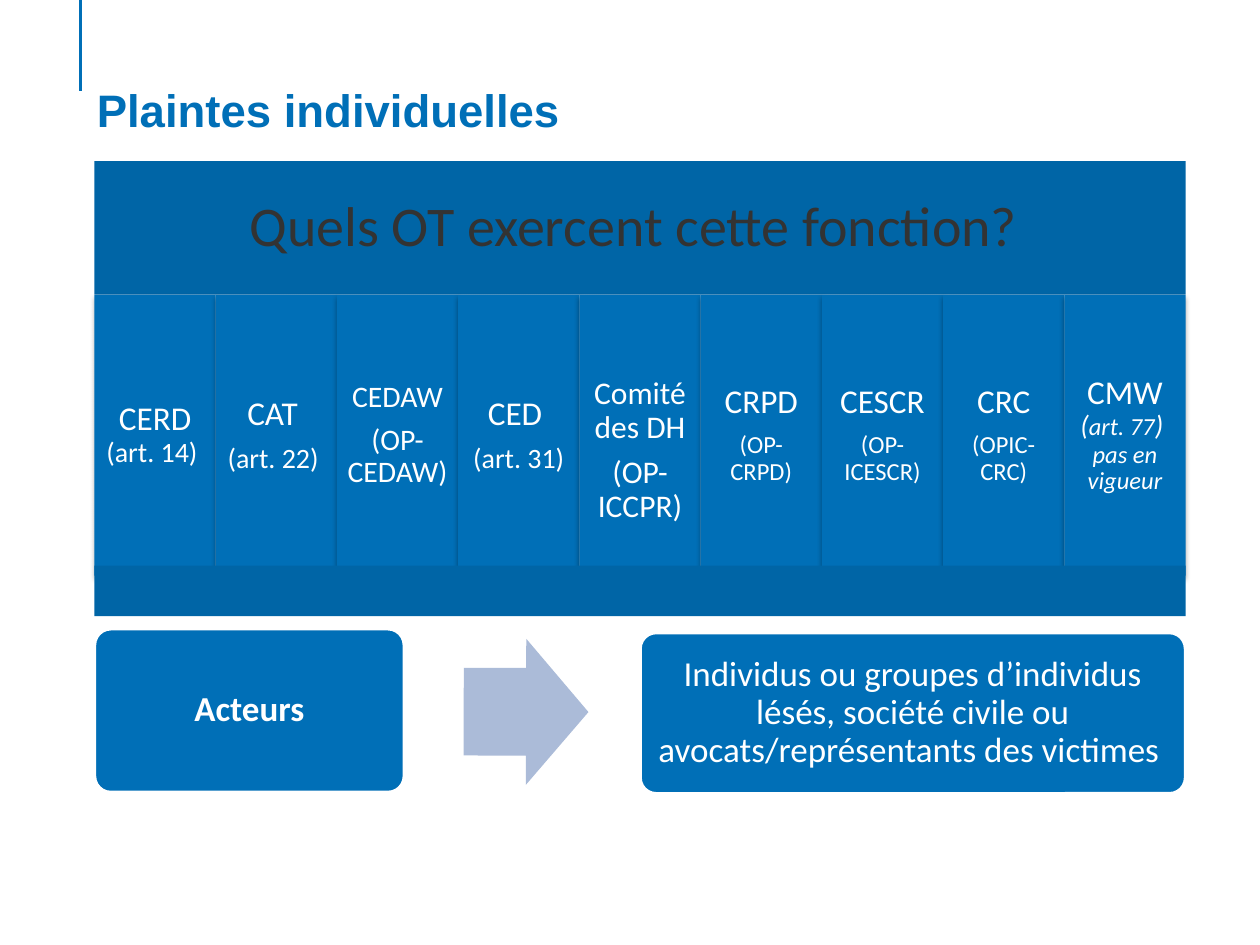
from lxml import etree
from pptx import Presentation
from pptx.dml.color import RGBColor
from pptx.enum import shapes, text
from pptx.oxml import ns
from pptx.util import Inches, Pt

BLUE = RGBColor(0x00, 0x6F, 0xB7)
DARK_BLUE = RGBColor(0x00, 0x65, 0xA6)
PALE_BLUE = RGBColor(0xAB, 0xBB, 0xD8)
GREY = RGBColor(0x33, 0x33, 0x33)
WHITE = RGBColor(0xFF, 0xFF, 0xFF)

COMMITTEES = [
    ([[("CERD ", 19), ("(art. 14) ", 16)]], 0.08),
    ([[("CAT ", 19)], [("(art. 22) ", 16)]], 0.08),
    ([[("CEDAW", 17)], [("(OP-CEDAW)", 17)]], 0.07),
    ([[("CED ", 19)], [("(art. 31)", 16)]], 0.08),
    ([[("Comité des DH", 18)], [("(OP-ICCPR)", 18)]], 0.05),
    ([[("CRPD", 19)], [("(OP-CRPD)", 14)]], 0.08),
    ([[("CESCR", 19)], [("(OP-ICESCR)", 14)]], 0.08),
    ([[("CRC", 19)], [("(OPIC-CRC)", 14)]], 0.08),
    ([[("CMW ", 19), ("(", 16, {"italic": True}), ("art. 77", 14, {"italic": True}),
       (") ", 16, {"italic": True}), (" pas en vigueur", 14, {"italic": True})]], 0.08),
]
LOWERED = {"Comité des DH": 0.24}


def add_block(slide, kind, box, fill, line=None):
    """Add a flat filled shape, outlined when a line colour is given."""
    shape = slide.shapes.add_shape(kind, *map(Inches, box))
    shape.shadow.inherit = False
    shape.fill.solid()
    shape.fill.fore_color.rgb = fill
    if line is None:
        shape.line.fill.background()
    else:
        shape.line.color.rgb = line
        shape.line.width = Pt(2)
    return shape


def write(shape, paragraphs, inset, color=WHITE, lowered=0):
    """Fill a shape with centred paragraphs of (text, size, format) runs."""
    frame = shape.text_frame
    values = {"word_wrap": True, "vertical_anchor": text.MSO_ANCHOR.MIDDLE,
              "margin_left": Inches(inset), "margin_right": Inches(inset),
              "margin_top": Inches(inset + lowered), "margin_bottom": Inches(inset)}
    for name, value in values.items():
        setattr(frame, name, value)
    for index, runs in enumerate(paragraphs):
        paragraph = frame.add_paragraph() if index else frame.paragraphs[0]
        paragraph.alignment = text.PP_ALIGN.CENTER
        paragraph.line_spacing = 0.9
        paragraph.space_after = Pt(round(0.35 * runs[0][1], 1))
        for words, size, *extra in runs:
            run = paragraph.add_run()
            run.text = words
            run.font.color.rgb = color
            formats = {"name": "Calibri", "size": Pt(size), **(extra[0] if extra else {})}
            for name, value in formats.items():
                setattr(run.font, name, value)


def add_soft_shadow(shape):
    """Give a shape a soft shadow that falls straight down."""
    effects = shape._element.spPr.find(ns.qn("a:effectLst"))
    shadow = etree.SubElement(effects, ns.qn("a:outerShdw"), blurRad=str(Pt(3.1)),
                              dist=str(Pt(1.8)), dir="5400000", rotWithShape="0")
    color = etree.SubElement(shadow, ns.qn("a:srgbClr"), val="000000")
    etree.SubElement(color, ns.qn("a:alpha"), val="35000")


def add_title(slide, left, top, width, height):
    """Add the title and the accent line that drops from the slide's top edge."""
    accent_x = Inches(left - 0.03)
    accent = slide.shapes.add_connector(shapes.MSO_CONNECTOR.STRAIGHT,
                                        accent_x, 0, accent_x, Inches(0.72))
    accent.line.color.rgb = BLUE
    accent.line.width = Pt(2)
    etree.SubElement(accent._element.spPr, ns.qn("a:effectLst"))
    title = slide.shapes.add_textbox(*map(Inches, (left, top, width, height)))
    title.text_frame.word_wrap = True
    paragraph = title.text_frame.paragraphs[0]
    paragraph.text = "Plaintes individuelles"
    paragraph.font.color.rgb = BLUE
    for name, value in {"name": "Arial", "size": Pt(26), "bold": True}.items():
        setattr(paragraph.font, name, value)


def add_committees(slide, left, top, width, height):
    """Add the question banner, one column per committee and the base bar."""
    rectangle = shapes.MSO_SHAPE.RECTANGLE
    banner_height, column_height, base_height = 1.06, 2.23, 0.4
    banner = add_block(slide, rectangle, (left, top, width, banner_height), DARK_BLUE)
    write(banner, [[("Quels OT exercent cette fonction? ", 32)]], 0.13, GREY)
    column_width = width / len(COMMITTEES)
    for index, (paragraphs, inset) in enumerate(COMMITTEES):
        box = (left + index * column_width, top + banner_height, column_width, column_height)
        column = add_block(slide, rectangle, box, BLUE)
        add_soft_shadow(column)
        write(column, paragraphs, inset, lowered=LOWERED.get(paragraphs[0][0][0], 0))
    base_top = top + height - base_height
    add_block(slide, rectangle, (left, base_top, width, base_height), DARK_BLUE)


def add_actors(slide, left, top, width, height):
    """Add the actors box, the arrow and the box that lists the actors."""
    rounded = shapes.MSO_SHAPE.ROUNDED_RECTANGLE
    list_width = 4.33
    list_left = left + width - list_width
    actors = add_block(slide, rounded, (left, top, 2.46, height), BLUE, WHITE)
    arrow = add_block(slide, shapes.MSO_SHAPE.RIGHT_ARROW,
                      (left + 2.93, top + 0.08, 0.99, 1.16), PALE_BLUE)
    arrow.adjustments[0] = 0.6
    arrow.rotation = 0.2
    people = add_block(slide, rounded, (list_left, top + 0.03, list_width, 1.28), BLUE, WHITE)
    for shape in (actors, people):
        shape.adjustments[0] = 0.1
    write(actors, [[("Acteurs", 20, {"bold": True})]], 0.08)
    write(people, [[("Individus ou groupes d’individus lésés, société civile ou "
                     "avocats/représentants des victimes ", 20)]], 0.08)


def main():
    """Build and save the slide."""
    presentation = Presentation()
    presentation.slide_width = Inches(10)
    presentation.slide_height = Inches(7.5)
    slide = presentation.slides.add_slide(presentation.slide_layouts[6])
    add_title(slide, 0.67, 0.6, 8.42, 0.72)
    add_committees(slide, 0.75, 1.28, 8.66, 3.61)
    add_actors(slide, 0.75, 4.99, 8.66, 1.3)
    presentation.save("out.pptx")


if __name__ == "__main__":
    main()
